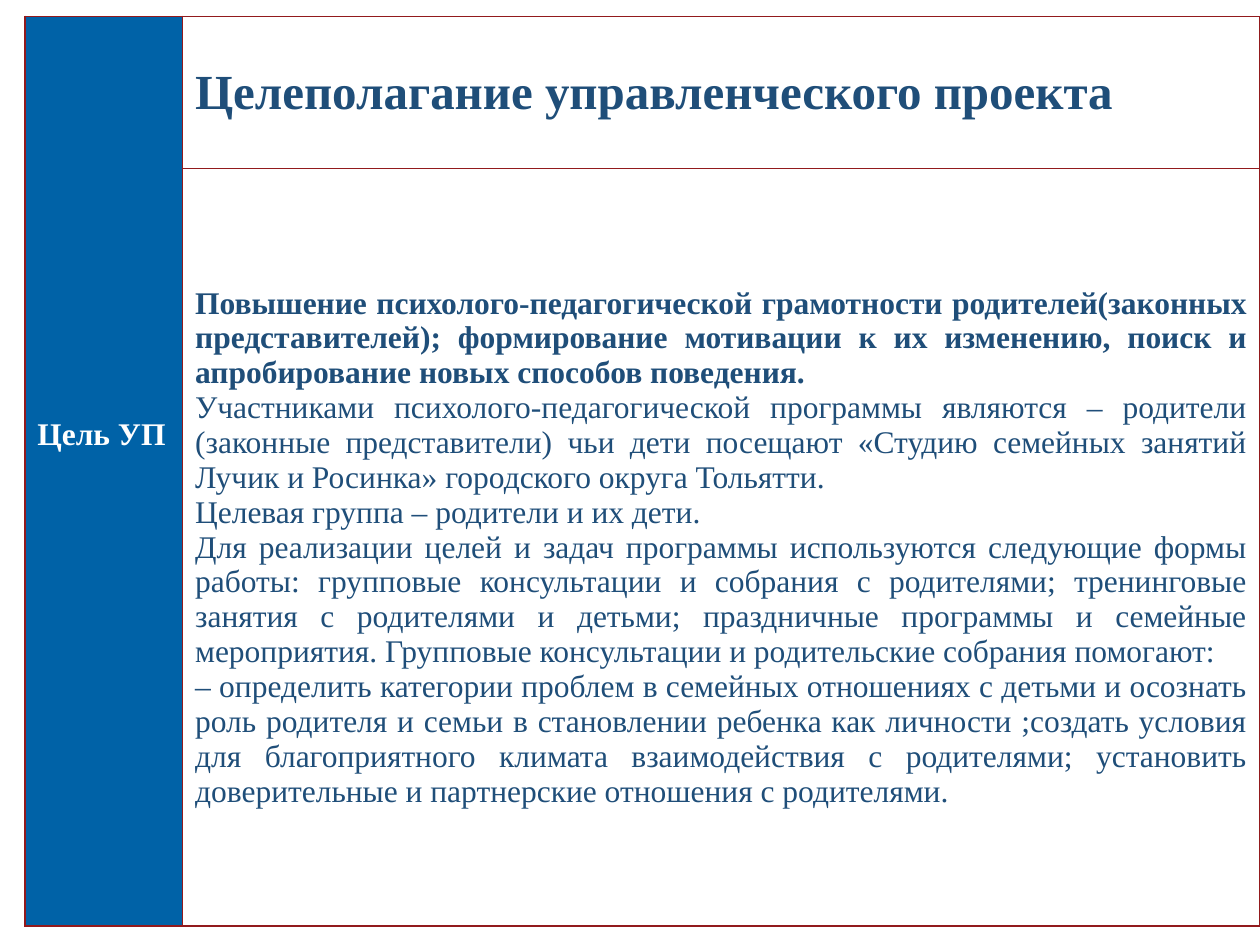
from dataclasses import dataclass
from lxml.etree import SubElement
from pptx import Presentation
from pptx.dml.color import RGBColor
from pptx.enum.text import MSO_ANCHOR as Anchor, PP_ALIGN as Align
from pptx.oxml.ns import qn
from pptx.util import Cm, Pt


@dataclass(frozen=True)
class Theme:
    font: str = "Times New Roman"
    blue: str = "0062A7"
    navy: str = "1F4E79"
    white: str = "FFFFFF"
    border: str = "921A1D"
    border_width: int = 1
    title_size: int = 28
    body_size: int = 18


THEME = Theme()
LABEL = "Цель УП"
TITLE = "Целеполагание управленческого проекта"
GOAL = (
    "Повышение психолого-педагогической грамотности родителей(законных представителей); "
    "формирование мотивации к их изменению, поиск и апробирование новых способов поведения."
)
DETAILS = [
    "Участниками психолого-педагогической программы являются – родители (законные "
    "представители) чьи дети посещают «Студию семейных занятий Лучик и "
    "Росинка» городского округа Тольятти.",
    "Целевая группа – родители и их дети.",
    "Для реализации целей и задач программы используются следующие формы работы: "
    "групповые консультации и собрания с родителями; тренинговые занятия с родителями "
    "и детьми; праздничные программы и семейные мероприятия. Групповые консультации "
    "и родительские собрания помогают:",
    "– определить категории проблем в семейных отношениях с детьми и осознать роль "
    "родителя и семьи в становлении ребенка как личности ;создать условия для "
    "благоприятного климата взаимодействия с родителями; установить доверительные "
    "и партнерские отношения с родителями.",
]


def write(para, text, size=THEME.body_size, color=THEME.navy, bold=False, align=Align.LEFT):
    para.alignment = align
    span = para.add_run()
    span.text = text
    span.font.name = THEME.font
    span.font.size = Pt(size)
    span.font.bold = bold
    span.font.color.rgb = RGBColor.from_string(color)


def style_cell(cell, fill):
    cell.vertical_anchor = Anchor.MIDDLE
    properties = cell._tc.get_or_add_tcPr()
    for side in ("lnL", "lnR", "lnT", "lnB"):
        line = SubElement(properties, qn(f"a:{side}"), w=str(Pt(THEME.border_width)))
        solid = SubElement(line, qn("a:solidFill"))
        SubElement(solid, qn("a:srgbClr"), val=THEME.border)
    cell.fill.solid()
    cell.fill.fore_color.rgb = RGBColor.from_string(fill)


def add_goal_table(page, left, top, width, height, label_width, title_height):
    table = page.shapes.add_table(2, 2, left, top, width, height).table
    table.first_row = table.horz_banding = False
    table.columns[0].width = label_width
    table.columns[1].width = width - label_width
    table.rows[0].height = title_height
    table.rows[1].height = height - title_height

    for row in range(2):
        for column, fill in enumerate((THEME.blue, THEME.white)):
            style_cell(table.cell(row, column), fill)
    label, title, body = table.cell(0, 0), table.cell(0, 1), table.cell(1, 1)
    label.merge(table.cell(1, 0))
    label.margin_bottom = Cm(1.58)

    write(label.text_frame.paragraphs[0], LABEL, color=THEME.white, bold=True)
    write(title.text_frame.paragraphs[0], TITLE, size=THEME.title_size, bold=True)
    write(body.text_frame.paragraphs[0], GOAL, bold=True, align=Align.JUSTIFY)
    for detail in DETAILS:
        write(body.text_frame.add_paragraph(), detail, align=Align.JUSTIFY)


def main():
    deck = Presentation()
    deck.slide_width, deck.slide_height = Cm(25.4), Cm(19.05)
    page = deck.slides.add_slide(deck.slide_layouts[6])
    add_goal_table(
        page, Cm(0.5), Cm(0.33), Cm(24.9), Cm(18.34),
        label_width=Cm(3.18), title_height=Cm(3.07),
    )
    deck.save("out.pptx")


if __name__ == "__main__":
    main()
